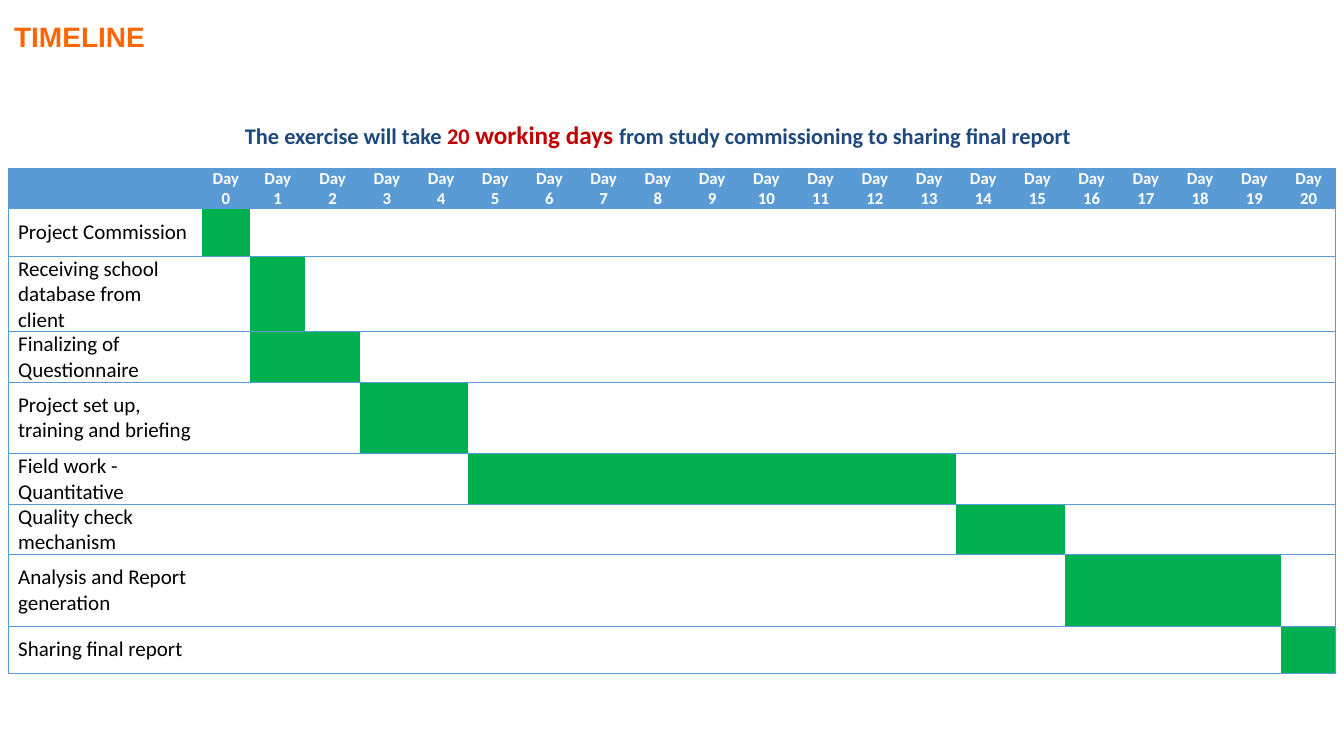
import pptx
import pptx.util
import pptx.dml.color
import pptx.enum.text
import pptx.oxml
import pptx.oxml.ns
from pptx.util import Inches

HUES = {"title": "FF6600", "blue": "5B9BD5", "navy": "1F497D", "red": "C00000",
        "bar": "00B050", "white": "FFFFFF", "black": "000000"}
DAYS = 21
# Task, row height, first day, last day
TASKS = [
    ("Project Commission", 0.47, 0, 0),
    ("Receiving school database from client", 0.71, 1, 1),
    ("Finalizing of Questionnaire", 0.47, 1, 2),
    ("Project set up, training and briefing", 0.71, 3, 4),
    ("Field work - Quantitative", 0.47, 5, 13),
    ("Quality check mechanism", 0.47, 14, 15),
    ("Analysis and Report generation", 0.71, 16, 19),
    ("Sharing final report", 0.47, 20, 20),
]
ALIGN = pptx.enum.text.PP_ALIGN
ANCHOR = pptx.enum.text.MSO_ANCHOR
FIT = pptx.enum.text.MSO_AUTO_SIZE


def paint(hue):
    return pptx.dml.color.RGBColor.from_string(HUES[hue])


def apply(item, values):
    for name, value in values.items():
        setattr(item, name, value)


def add_run(para, text, size, hue, bold=True, face="Calibri"):
    run = para.add_run()
    run.text = text
    apply(run.font, {"size": pptx.util.Pt(size), "bold": bold, "name": face})
    run.font.color.rgb = paint(hue)


def set_title(slide):
    title = slide.shapes.title
    apply(title, {"left": Inches(0.13), "top": Inches(0.17),
                  "width": Inches(3.12), "height": Inches(0.35)})
    frame = title.text_frame
    apply(frame, {"margin_left": Inches(0.01), "margin_top": Inches(0.02),
                  "margin_right": 0, "margin_bottom": 0, "word_wrap": True,
                  "vertical_anchor": ANCHOR.TOP, "auto_size": FIT.SHAPE_TO_FIT_TEXT})
    para = frame.paragraphs[0]
    para.alignment = ALIGN.LEFT
    add_run(para, "TIMELINE", 20, "title", face="Arial")


def add_lead(slide):
    box = slide.shapes.add_textbox(Inches(0.13), Inches(1.13), Inches(12.79), Inches(0.4))
    apply(box.text_frame, {"word_wrap": True, "auto_size": FIT.SHAPE_TO_FIT_TEXT})
    para = box.text_frame.paragraphs[0]
    para.alignment = ALIGN.CENTER
    for text, size, hue in [
        ("The exercise will take ", 16, "navy"),
        ("20", 16, "red"),
        (" working days ", 18, "red"),
        ("from study commissioning to sharing final report", 16, "navy"),
    ]:
        add_run(para, text, size, hue)


def set_edges(cell, sides):
    """Draw blue lines on the given sides and clear the other sides."""
    props = cell._tc.get_or_add_tcPr()
    space = pptx.oxml.ns.nsdecls("a")
    for place, side in enumerate("LRTB"):
        fill = "<a:noFill/>"
        if side in sides:
            fill = f'<a:solidFill><a:srgbClr val="{HUES["blue"]}"/></a:solidFill>'
        line = f'<a:ln{side} {space} w="6350">{fill}</a:ln{side}>'
        props.insert(place, pptx.oxml.parse_xml(line))


def style_cell(cell, col, hue):
    apply(cell, {"margin_left": Inches(0.1), "margin_right": Inches(0.1),
                 "margin_top": 0, "margin_bottom": 0,
                 "vertical_anchor": ANCHOR.MIDDLE})
    if hue:
        cell.fill.solid()
        cell.fill.fore_color.rgb = paint(hue)
    else:
        cell.fill.background()
    set_edges(cell, "TB" + {0: "L", DAYS: "R"}.get(col, ""))


def add_plan(slide):
    width, first = 13.17, [1.92, 0.48, 0.55]
    rest = DAYS + 1 - len(first)
    widths = first + [(width - sum(first)) / rest] * rest
    heights = [0.35] + [task[1] for task in TASKS]
    table = slide.shapes.add_table(
        len(heights), len(widths), Inches(0.08), Inches(1.67),
        Inches(width), Inches(sum(heights))).table
    apply(table, {"first_row": False, "horz_banding": False})
    for col, size in zip(table.columns, widths):
        col.width = Inches(size)
    for row, size in zip(table.rows, heights):
        row.height = Inches(size)

    for col in range(DAYS + 1):
        cell = table.cell(0, col)
        style_cell(cell, col, "blue")
        if col:
            para = cell.text_frame.paragraphs[0]
            para.alignment = ALIGN.CENTER
            add_run(para, f"Day {col - 1}", 12, "white")

    for row, (name, _, start, end) in enumerate(TASKS, 1):
        for col in range(DAYS + 1):
            busy = start <= col - 1 <= end
            style_cell(table.cell(row, col), col, "bar" if busy else None)
        para = table.cell(row, 0).text_frame.paragraphs[0]
        add_run(para, name, 15, "black", bold=False)


def main():
    deck = pptx.Presentation()
    apply(deck, {"slide_width": Inches(13.33), "slide_height": Inches(7.5)})
    slide = deck.slides.add_slide(deck.slide_layouts[5])
    set_title(slide)
    add_plan(slide)
    add_lead(slide)
    deck.save("out.pptx")


if __name__ == "__main__":
    main()
